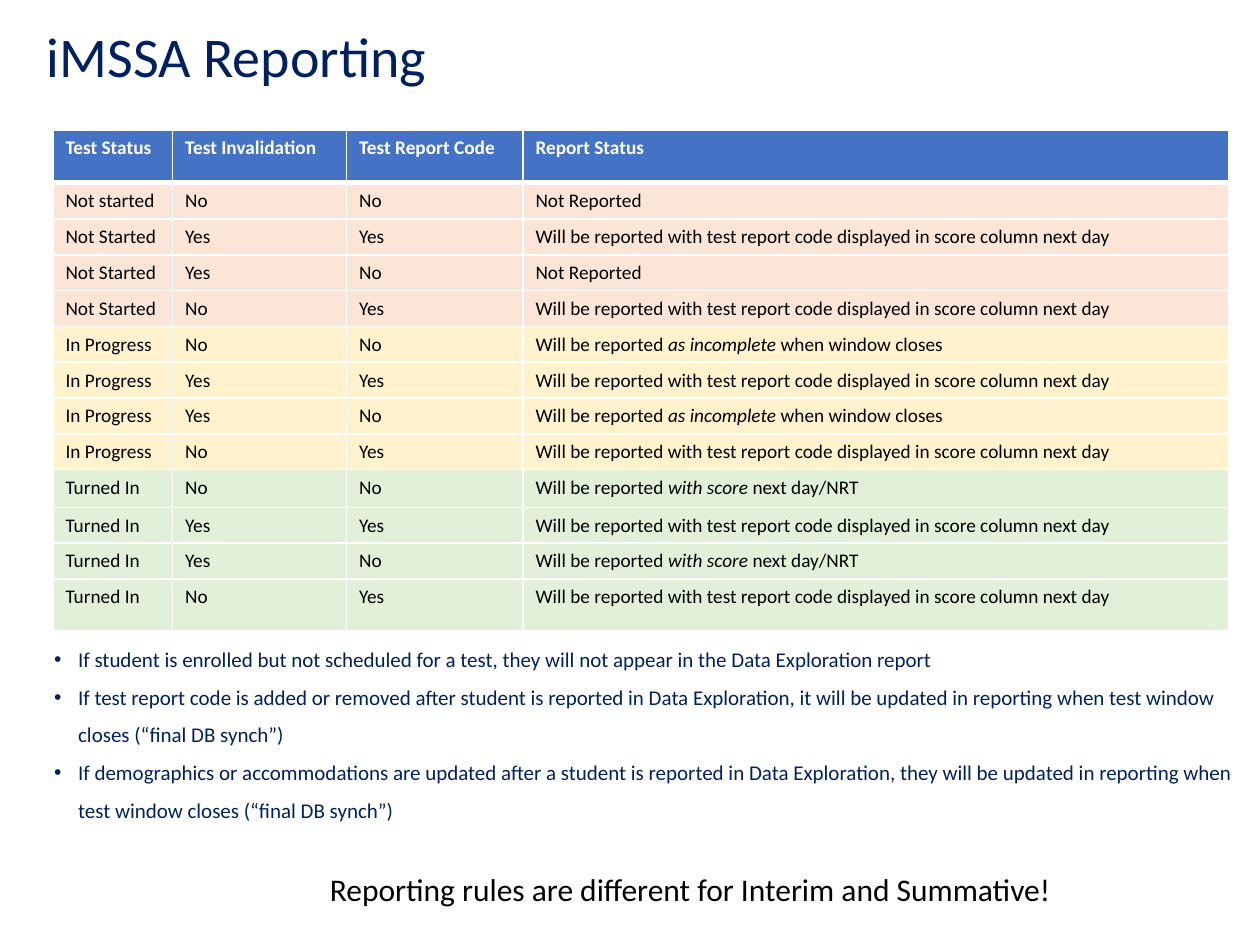
from lxml.etree import SubElement
from pptx import Presentation
from pptx.dml.color import RGBColor
from pptx.enum.text import MSO_ANCHOR, MSO_AUTO_SIZE, PP_ALIGN
from pptx.oxml import parse_xml
from pptx.oxml.ns import nsdecls, qn
from pptx.util import Inches, Pt

NAVY, BLACK, WHITE, BLUE = "002060", "000000", "FFFFFF", "4472C4"
HEADERS = ["Test Status", "Test Invalidation", "Test Report Code", "Report Status"]
NOT_REPORTED = ["Not Reported"]
WITH_CODE = ["Will be reported with test report code displayed in score column next day"]
INCOMPLETE = ["Will be reported ", "as incomplete ", "when window closes"]
WITH_SCORE = ["Will be reported ", "with score ", "next day/NRT"]
GROUPS = [
    (["Not started"] + ["Not Started"] * 3, "FBE5D6", NOT_REPORTED),
    (["In Progress"] * 4, "FFF2CC", INCOMPLETE),
    (["Turned In"] * 4, "E2F0D9", WITH_SCORE),
]
FLAGS = [("No", "No"), ("Yes", "Yes"), ("Yes", "No"), ("No", "Yes")]
BULLETS = [
    "If student is enrolled but not scheduled for a test, they will not appear in the Data Exploration report",
    "If test report code is added or removed after student is reported in Data Exploration, "
    "it will be updated in reporting when test window closes (“final DB synch”)",
    "If demographics or accommodations are updated after a student is reported in Data Exploration, "
    "they will be updated in reporting when test window closes (“final DB synch”)",
]
COLUMN_WIDTHS = [0.95, 1.38, 1.4, 5.6]
ROW_HEIGHTS = [0.42] + [0.29] + [0.28] * 7 + [0.3] + [0.28] * 2 + [0.41]


def style(font, size, color, bold=False):
    font.name = "Calibri"
    font.size = Pt(size)
    font.bold = bold
    font.color.rgb = RGBColor.from_string(color)


def place(shape, left, top, width, height):
    shape.left, shape.top = Inches(left), Inches(top)
    shape.width, shape.height = Inches(width), Inches(height)


presentation = Presentation()
presentation.slide_width, presentation.slide_height = Inches(10), Inches(7.5)
slide = presentation.slides.add_slide(presentation.slide_layouts[1])

title = slide.shapes.title
place(title, 0.27, 0.12, 7.67, 0.64)
title.text_frame.text = "iMSSA Reporting"
title.text_frame.vertical_anchor = MSO_ANCHOR.TOP
title.text_frame.auto_size = MSO_AUTO_SIZE.SHAPE_TO_FIT_TEXT
heading = title.text_frame.paragraphs[0]
heading.alignment = PP_ALIGN.LEFT
style(heading.font, 32, NAVY)

rows = [(BLUE, [[header] for header in HEADERS])]
for statuses, fill, default_report in GROUPS:
    for status, (invalidation, code) in zip(statuses, FLAGS):
        report = WITH_CODE if code == "Yes" else default_report
        rows.append((fill, [[status], [invalidation], [code], report]))

table = slide.shapes.add_table(
    len(rows), len(HEADERS), Inches(0.42), Inches(1.03),
    Inches(sum(COLUMN_WIDTHS)), Inches(sum(ROW_HEIGHTS)),
).table
table.horz_banding = False
for column, width in zip(table.columns, COLUMN_WIDTHS):
    column.width = Inches(width)
for row, height in zip(table.rows, ROW_HEIGHTS):
    row.height = Inches(height)

for row_index, (fill, contents) in enumerate(rows):
    is_header = row_index == 0
    for column_index, pieces in enumerate(contents):
        cell = table.cell(row_index, column_index)
        paragraph = cell.text_frame.paragraphs[0]
        style(paragraph.font, 11, WHITE if is_header else BLACK, is_header)
        for piece_index, piece in enumerate(pieces):
            run = paragraph.add_run()
            run.text = piece
            if piece_index == 1:
                run.font.italic = True
        cell.fill.solid()
        cell.fill.fore_color.rgb = RGBColor.from_string(fill)
        properties = cell._tc.get_or_add_tcPr()
        for position, side in enumerate("LRTB"):
            heavy = (is_header and side == "B") or (row_index == 1 and side == "T")
            properties.insert(position, parse_xml(
                f'<a:ln{side} {nsdecls("a")} w="{Pt(3 if heavy else 1)}"><a:solidFill>'
                f'<a:srgbClr val="{WHITE}"/></a:solidFill></a:ln{side}>'
            ))

body = slide.placeholders[1]
place(body, 0.33, 4.98, 9.74, 1.58)
body.text_frame.text = "\n".join(BULLETS)
body.text_frame.auto_size = MSO_AUTO_SIZE.SHAPE_TO_FIT_TEXT
for paragraph in body.text_frame.paragraphs:
    paragraph.line_spacing = 1.5
    paragraph.space_before = Pt(0)
    properties = paragraph._p.get_or_add_pPr()
    properties.set("marL", str(Inches(0.19)))
    properties.set("indent", str(-Inches(0.19)))
    SubElement(properties, qn("a:buFont"), typeface="Arial")
    SubElement(properties, qn("a:buChar"), char="•")
    style(paragraph.font, 12, NAVY)

note = slide.shapes.add_textbox(Inches(2.52), Inches(6.86), Inches(6), Inches(0.4))
note.text_frame.word_wrap = False
note.text_frame.auto_size = MSO_AUTO_SIZE.SHAPE_TO_FIT_TEXT
note.text_frame.text = "Reporting rules are different for Interim and Summative!"
style(note.text_frame.paragraphs[0].font, 18, BLACK)

presentation.save("out.pptx")
